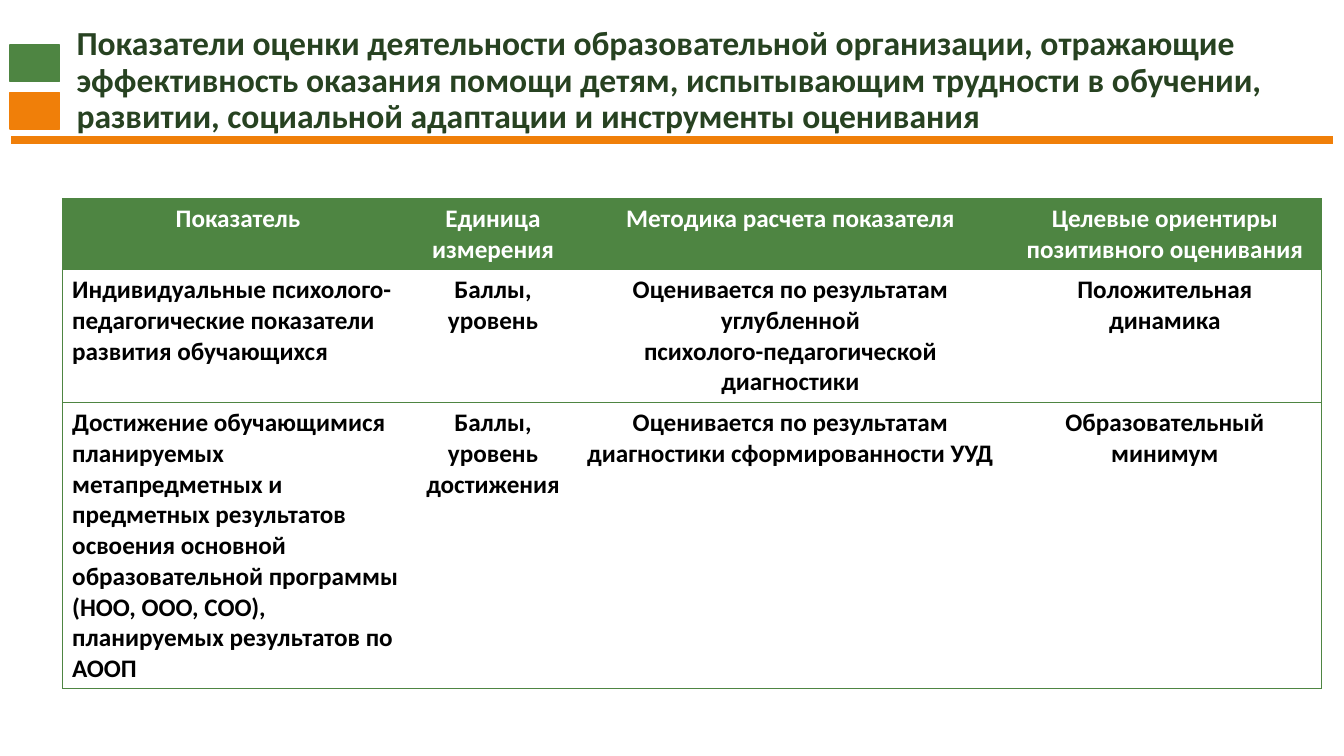
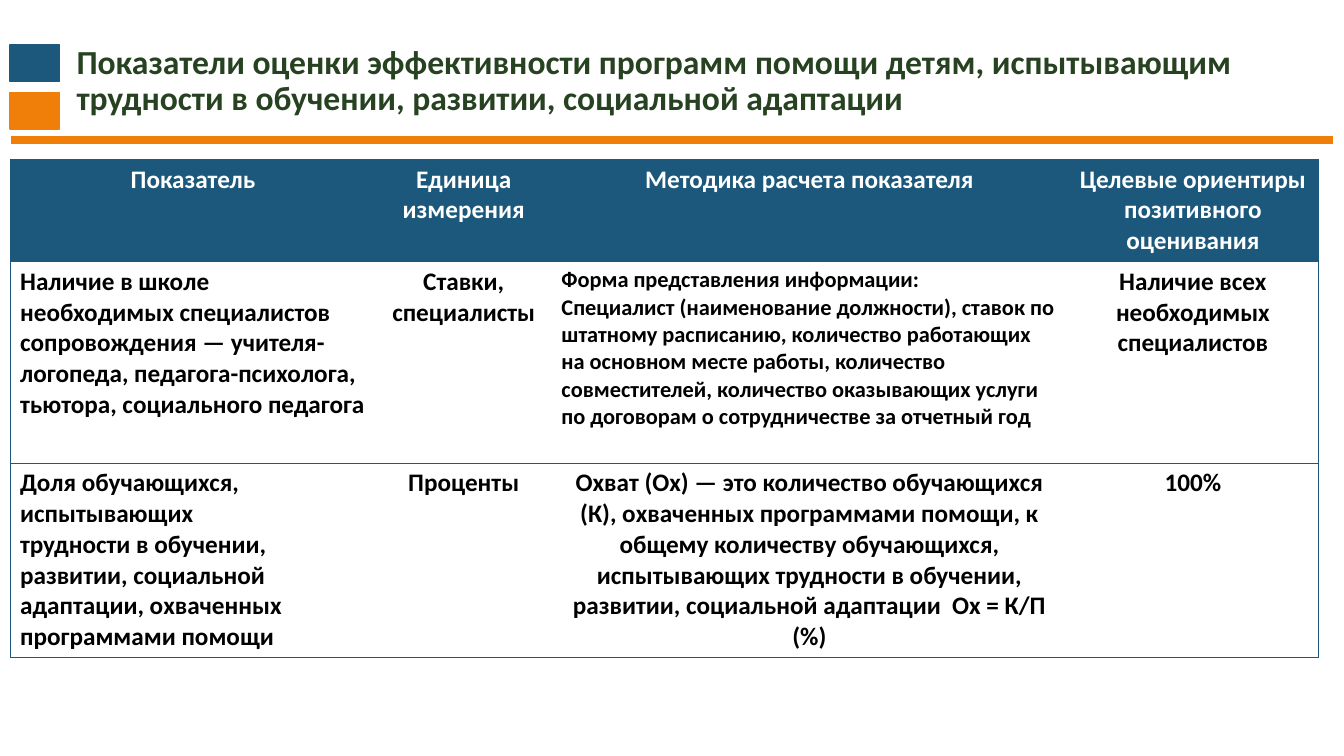
from dataclasses import dataclass

from lxml.etree import SubElement
from pptx import Presentation
from pptx.dml.color import RGBColor
from pptx.enum.shapes import MSO_CONNECTOR, MSO_SHAPE
from pptx.enum.text import MSO_ANCHOR, PP_ALIGN
from pptx.oxml.ns import qn
from pptx.slide import Slide
from pptx.table import _Cell
from pptx.util import Pt

GREEN = RGBColor(0x4E, 0x85, 0x42)
BLUE = RGBColor(0x1B, 0x58, 0x7C)
ORANGE = RGBColor(0xF0, 0x7F, 0x09)
TITLE_GREEN = RGBColor(0x27, 0x42, 0x21)
WHITE = RGBColor(0xFF, 0xFF, 0xFF)
BLACK = RGBColor(0x00, 0x00, 0x00)
FONT = "Calibri"


@dataclass(frozen=True)
class CellText:
    paragraphs: tuple[str, ...]
    size: float = 18
    alignment: PP_ALIGN = PP_ALIGN.CENTER


@dataclass(frozen=True)
class IndicatorSlide:
    title: str
    accent: RGBColor
    left: float
    top: float
    column_widths: tuple[float, ...]
    row_heights: tuple[float, ...]
    rows: tuple[tuple[CellText, ...], ...]


def centered(*paragraphs: str) -> CellText:
    return CellText(paragraphs)


def left_aligned(*paragraphs: str, size: float = 18) -> CellText:
    return CellText(paragraphs, size, PP_ALIGN.LEFT)


HEADER = (
    centered("Показатель"),
    centered("Единица измерения"),
    centered("Методика расчета показателя"),
    centered("Целевые ориентиры позитивного оценивания"),
)

SLIDES = (
    IndicatorSlide(
        title="Показатели оценки деятельности образовательной организации, отражающие "
        "эффективность оказания помощи детям, испытывающим трудности в обучении, "
        "развитии, социальной адаптации и инструменты оценивания",
        accent=GREEN,
        left=44.4,
        top=142,
        column_widths=(251.3, 113, 311.8, 223.2),
        row_heights=(50.5, 95, 204.5),
        rows=(
            (
                left_aligned(
                    "Индивидуальные психолого-педагогические показатели",
                    "развития обучающихся",
                ),
                centered("Баллы,", "уровень"),
                centered(
                    "Оценивается по результатам углубленной",
                    "психолого-педагогической диагностики",
                ),
                centered("Положительная динамика"),
            ),
            (
                left_aligned(
                    "Достижение обучающимися",
                    "планируемых метапредметных и предметных результатов "
                    "освоения основной образовательной программы",
                    "(НОО, ООО, СОО), планируемых результатов по АООП",
                ),
                centered("Баллы,", "уровень", "достижения"),
                centered("Оценивается по результатам диагностики сформированности УУД"),
                centered("Образовательный минимум"),
            ),
        ),
    ),
    IndicatorSlide(
        title="Показатели оценки эффективности программ помощи детям, испытывающим "
        "трудности в обучении, развитии, социальной адаптации",
        accent=BLUE,
        left=7.2,
        top=113.6,
        column_widths=(261.4, 125.3, 368.6, 179.3),
        row_heights=(73, 144, 139),
        rows=(
            (
                left_aligned(
                    "Наличие в школе необходимых специалистов сопровождения — "
                    "учителя-логопеда, педагога-психолога, тьютора, социального педагога"
                ),
                centered("Ставки,", "специалисты"),
                left_aligned(
                    "Форма представления информации:",
                    "Специалист (наименование должности), ставок по штатному расписанию, "
                    "количество работающих на основном месте работы, количество "
                    "совместителей, количество оказывающих услуги по договорам о "
                    "сотрудничестве за отчетный год",
                    size=16,
                ),
                centered("Наличие всех", "необходимых", "специалистов"),
            ),
            (
                left_aligned(
                    "Доля обучающихся, испытывающих",
                    "трудности в обучении, развитии, социальной адаптации, "
                    "охваченных программами помощи",
                ),
                centered("Проценты"),
                centered(
                    "Охват (Ох) — это количество обучающихся (К), охваченных программами "
                    "помощи, к общему количеству обучающихся, испытывающих трудности в "
                    "обучении, развитии, социальной адаптации  Ох = К/П (%)"
                ),
                centered("100%"),
            ),
        ),
    ),
)


def add_bold_run(paragraph, text: str, size: float, color: RGBColor) -> None:
    run = paragraph.add_run()
    run.text = text
    run.font.name = FONT
    run.font.size = Pt(size)
    run.font.bold = True
    run.font.color.rgb = color


def add_title(slide: Slide, title: str) -> None:
    frame = slide.shapes.add_textbox(Pt(47.6), Pt(5.8), Pt(896.4), Pt(104.4)).text_frame
    frame.word_wrap = True
    frame.vertical_anchor = MSO_ANCHOR.MIDDLE
    paragraph = frame.paragraphs[0]
    paragraph.line_spacing = 0.9
    add_bold_run(paragraph, title, 24, TITLE_GREEN)


def add_square(slide: Slide, top: float, color: RGBColor) -> None:
    shape = slide.shapes.add_shape(MSO_SHAPE.RECTANGLE, Pt(7.2), Pt(top), Pt(35.4), Pt(26))
    shape.shadow.inherit = False
    shape.fill.solid()
    shape.fill.fore_color.rgb = color
    shape.line.color.rgb = color
    shape.line.width = Pt(1)


def add_title_rule(slide: Slide) -> None:
    rule = slide.shapes.add_connector(
        MSO_CONNECTOR.STRAIGHT, Pt(7.9), Pt(100), Pt(952), Pt(100)
    )
    rule.line.color.rgb = ORANGE
    rule.line.width = Pt(6)
    SubElement(rule.element.spPr, qn("a:effectLst"))


def set_borders(cell: _Cell, color: RGBColor, visible: dict[str, bool]) -> None:
    properties = cell._tc.get_or_add_tcPr()
    for edge, shown in visible.items():
        line = SubElement(properties, qn(f"a:ln{edge}"), w=str(Pt(0.5)))
        if shown:
            fill = SubElement(line, qn("a:solidFill"))
            SubElement(fill, qn("a:srgbClr"), val=str(color))
        else:
            SubElement(line, qn("a:noFill"))


def fill_cell(cell: _Cell, content: CellText, color: RGBColor) -> None:
    frame = cell.text_frame
    for index, text in enumerate(content.paragraphs):
        paragraph = frame.add_paragraph() if index else frame.paragraphs[0]
        paragraph.alignment = content.alignment
        add_bold_run(paragraph, text, content.size, color)


def add_indicator_table(slide: Slide, content: IndicatorSlide) -> None:
    rows = (HEADER, *content.rows)
    table = slide.shapes.add_table(
        len(rows),
        len(HEADER),
        Pt(content.left),
        Pt(content.top),
        Pt(sum(content.column_widths)),
        Pt(sum(content.row_heights)),
    ).table
    table.first_row = False
    table.horz_banding = False
    for column, width in zip(table.columns, content.column_widths):
        column.width = Pt(width)
    for row, height in zip(table.rows, content.row_heights):
        row.height = Pt(height)
    last_column = len(HEADER) - 1
    for row_index, row in enumerate(rows):
        for column_index, text in enumerate(row):
            cell = table.cell(row_index, column_index)
            edges = {"L": column_index == 0, "R": column_index == last_column, "T": True, "B": True}
            set_borders(cell, content.accent, edges)
            if row_index == 0:
                cell.fill.solid()
                cell.fill.fore_color.rgb = content.accent
            else:
                cell.fill.background()
            fill_cell(cell, text, BLACK if row_index else WHITE)


def main() -> None:
    presentation = Presentation()
    presentation.slide_width = Pt(960)
    presentation.slide_height = Pt(540)
    for content in SLIDES:
        slide = presentation.slides.add_slide(presentation.slide_layouts[6])
        add_title(slide, content.title)
        add_indicator_table(slide, content)
        add_title_rule(slide)
        add_square(slide, 66.2, ORANGE)
        add_square(slide, 32.2, content.accent)
    presentation.save("out.pptx")


if __name__ == "__main__":
    main()
